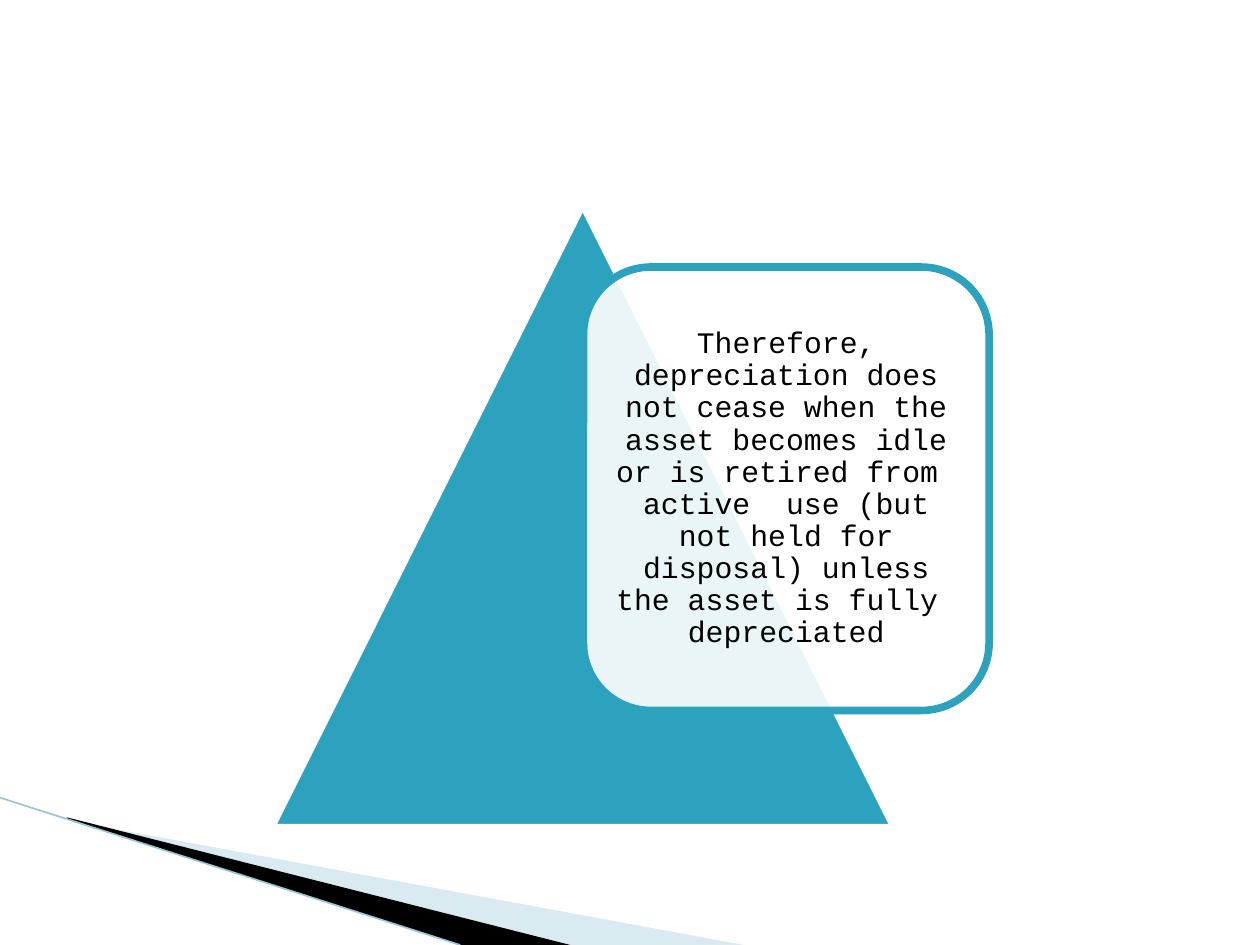
"""Build a slide with a triangle and a rounded card about depreciation."""
import pptx
import pptx.util
import pptx.dml.color
import pptx.enum.shapes
import pptx.enum.text
import pptx.oxml.ns
import lxml.etree

Pt = pptx.util.Pt
SHAPES = pptx.enum.shapes.MSO_SHAPE
TEAL, WHITE, BLACK = "2DA2BF", "FFFFFF", "000000"
SIZE = (720, 540)

MESSAGE = (
    "Therefore, depreciation does not cease when the asset becomes idle "
    "or is retired from  active  use (but not held for disposal) unless "
    "the asset is fully  depreciated"
)
WEDGES = [
    {"points": [(39.6, 468.7), (425, 540), (326, 540), (39.6, 468)],
     "color": "A0CBDC", "opacity": 40},
    {"points": [(38.2, 467.3), (326, 540), (263, 540), (38.9, 468)],
     "color": BLACK, "opacity": 100},
]
EDGE = (0, 455.8, 263, 540)
TRIANGLE = (154.8, 116.6, 356.4, 356.4)
CARD = (333.4, 152.6, 231.8, 253.4)
CARD_INSET = 11.3


def rgb(color):
    return pptx.dml.color.RGBColor.from_string(color)


def add_node(parent, tag, **attributes):
    return lxml.etree.SubElement(parent, pptx.oxml.ns.qn(tag), **attributes)


def paint(shape, color, opacity=100, line=None, width=4.33):
    shape.shadow.inherit = False
    shape.fill.solid()
    shape.fill.fore_color.rgb = rgb(color)
    if opacity < 100:
        fill = shape.fill._xPr.find(pptx.oxml.ns.qn("a:solidFill"))
        add_node(fill[0], "a:alpha", val=str(opacity * 1000))
    if line:
        shape.line.color.rgb = rgb(line)
        shape.line.width = Pt(width)
    else:
        shape.line.fill.background()


def add_wedge(page, points, color, opacity):
    builder = page.shapes.build_freeform(*points[0], scale=Pt(1))
    builder.add_line_segments(points[1:], close=True)
    paint(builder.convert_to_shape(), color, opacity)


def add_edge(page, ends, color, width):
    edge = page.shapes.add_connector(
        pptx.enum.shapes.MSO_CONNECTOR.STRAIGHT, *map(Pt, ends))
    edge.line.color.rgb = rgb(color)
    edge.line.width = Pt(width)
    add_node(edge._element.spPr, "a:effectLst")


def add_text(page, text, place, font, size, color, inset):
    box = page.shapes.add_textbox(*map(Pt, place))
    frame = box.text_frame
    frame.word_wrap = True
    frame.vertical_anchor = pptx.enum.text.MSO_ANCHOR.MIDDLE
    frame.margin_left = frame.margin_right = Pt(inset)
    frame.margin_top = frame.margin_bottom = Pt(inset)
    para = frame.paragraphs[0]
    para.alignment = pptx.enum.text.PP_ALIGN.CENTER
    para.line_spacing = 0.9
    span = para.add_run()
    span.text = text
    span.font.name = font
    span.font.size = Pt(size)
    span.font.color.rgb = rgb(color)


def main():
    deck = pptx.Presentation()
    deck.slide_width, deck.slide_height = map(Pt, SIZE)
    page = deck.slides.add_slide(deck.slide_layouts[6])

    for wedge in WEDGES:
        add_wedge(page, **wedge)
    add_edge(page, EDGE, "97C5D8", 0.95)

    triangle = page.shapes.add_shape(SHAPES.ISOSCELES_TRIANGLE, *map(Pt, TRIANGLE))
    paint(triangle, TEAL, line=WHITE)
    card = page.shapes.add_shape(SHAPES.ROUNDED_RECTANGLE, *map(Pt, CARD))
    paint(card, WHITE, opacity=90, line=TEAL)

    left, top, width, height = CARD
    place = (left + CARD_INSET, top + CARD_INSET,
             width - 2 * CARD_INSET, height - 2 * CARD_INSET)
    add_text(page, MESSAGE, place, font="Courier New", size=17, color=BLACK, inset=5)

    deck.save("out.pptx")


if __name__ == "__main__":
    main()
